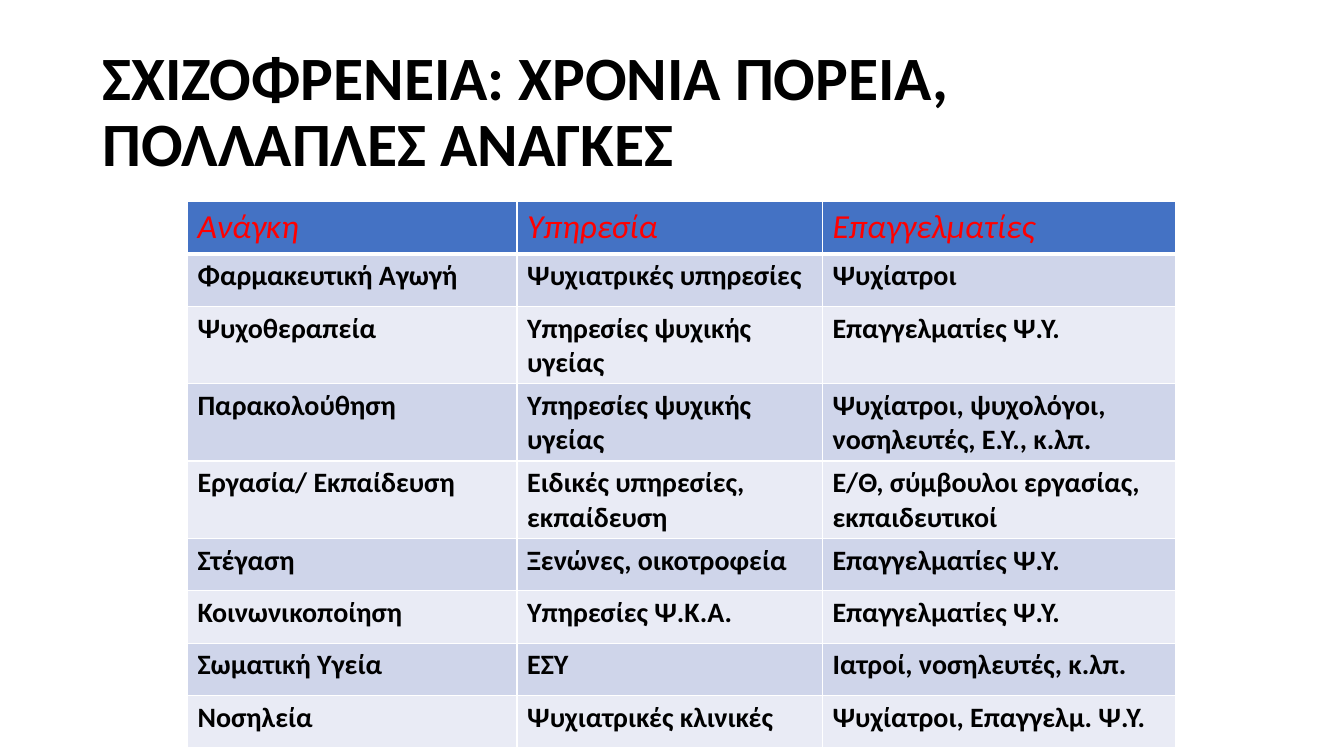
from lxml.etree import SubElement
from pptx import Presentation
from pptx.dml.color import RGBColor
from pptx.enum.text import MSO_ANCHOR
from pptx.oxml.ns import qn
from pptx.util import Inches, Pt

HUES = {"ink": "000000", "red": "FF0000", "blue": "4472C4",
        "dark": "CFD5EA", "light": "E9EBF5", "rule": "FFFFFF"}
TITLE = "ΣΧΙΖΟΦΡΕΝΕΙΑ: ΧΡΟΝΙΑ ΠΟΡΕΙΑ, ΠΟΛΛΑΠΛΕΣ ΑΝΑΓΚΕΣ"
HEAD = ("Ανάγκη", "Υπηρεσία", "Επαγγελματίες")
NEEDS = [
    ("Φαρμακευτική Αγωγή", "Ψυχιατρικές υπηρεσίες", "Ψυχίατροι"),
    ("Ψυχοθεραπεία", "Υπηρεσίες ψυχικής υγείας", "Επαγγελματίες Ψ.Υ."),
    ("Παρακολούθηση", "Υπηρεσίες ψυχικής υγείας",
     "Ψυχίατροι, ψυχολόγοι, νοσηλευτές, Ε.Υ., κ.λπ."),
    ("Εργασία/ Εκπαίδευση", "Ειδικές υπηρεσίες, εκπαίδευση",
     "Ε/Θ, σύμβουλοι εργασίας, εκπαιδευτικοί"),
    ("Στέγαση", "Ξενώνες, οικοτροφεία", "Επαγγελματίες Ψ.Υ."),
    ("Κοινωνικοποίηση", "Υπηρεσίες Ψ.Κ.Α.", "Επαγγελματίες Ψ.Υ."),
    ("Σωματική Υγεία", "ΕΣΥ", "Ιατροί, νοσηλευτές, κ.λπ."),
    ("Νοσηλεία", "Ψυχιατρικές κλινικές", "Ψυχίατροι, Επαγγελμ. Ψ.Υ."),
]


class Page:
    """A slide on a grid of 40 columns and 30 rows."""

    font = "Calibri"

    def __init__(self, deck):
        self.slide = deck.slides.add_slide(deck.slide_layouts[6])
        self.col = deck.slide_width / 40
        self.row = deck.slide_height / 30

    def place(self, x, y, w, h):
        return (round(x * self.col), round(y * self.row),
                round(w * self.col), round(h * self.row))

    def say(self, para, text, size, hue, bold=False, slant=False):
        run = para.add_run()
        run.text = text
        font = run.font
        font.name, font.size = self.font, Pt(size)
        font.bold, font.italic = bold, slant
        font.color.rgb = RGBColor.from_string(HUES[hue])

    def title(self, text, *spot):
        frame = self.slide.shapes.add_textbox(*self.place(*spot)).text_frame
        frame.word_wrap = True
        frame.vertical_anchor = MSO_ANCHOR.MIDDLE
        para = frame.paragraphs[0]
        para.line_spacing = 0.9
        self.say(para, text, 44, "ink", bold=True)

    def edge(self, cell, side, width):
        line = SubElement(cell._tc.get_or_add_tcPr(), qn("a:ln" + side),
                          w=str(Pt(width)))
        fill = SubElement(line, qn("a:solidFill"))
        SubElement(fill, qn("a:srgbClr"), val=HUES["rule"])

    def table(self, head, body, x, y, widths, high):
        rows = [head, *body]
        spot = self.place(x, y, sum(widths), high * len(rows))
        grid = self.slide.shapes.add_table(len(rows), len(head), *spot).table
        for col, width in zip(grid.columns, widths):
            col.width = round(width * self.col)
        for r, texts in enumerate(rows):
            grid.rows[r].height = round(high * self.row)
            for c, text in enumerate(texts):
                cell = grid.cell(r, c)
                for side in "LRTB":
                    thick = (r, side) in ((0, "B"), (1, "T"))
                    self.edge(cell, side, 3 if thick else 1)
                fill = "blue" if r == 0 else "dark" if r % 2 else "light"
                cell.fill.solid()
                cell.fill.fore_color.rgb = RGBColor.from_string(HUES[fill])
                para = cell.text_frame.paragraphs[0]
                if r == 0:
                    self.say(para, text, 24, "red", slant=True)
                else:
                    self.say(para, text, 20, "ink", bold=True)


def main():
    deck = Presentation()
    deck.slide_width, deck.slide_height = Inches(13.33), Inches(7.5)
    page = Page(deck)
    page.title(TITLE, 2.75, 1.6, 34.5, 5.8)
    page.table(HEAD, NEEDS, 5.58, 8, (9.81, 9.09, 10.5), 2.08)
    deck.save("out.pptx")


if __name__ == "__main__":
    main()
